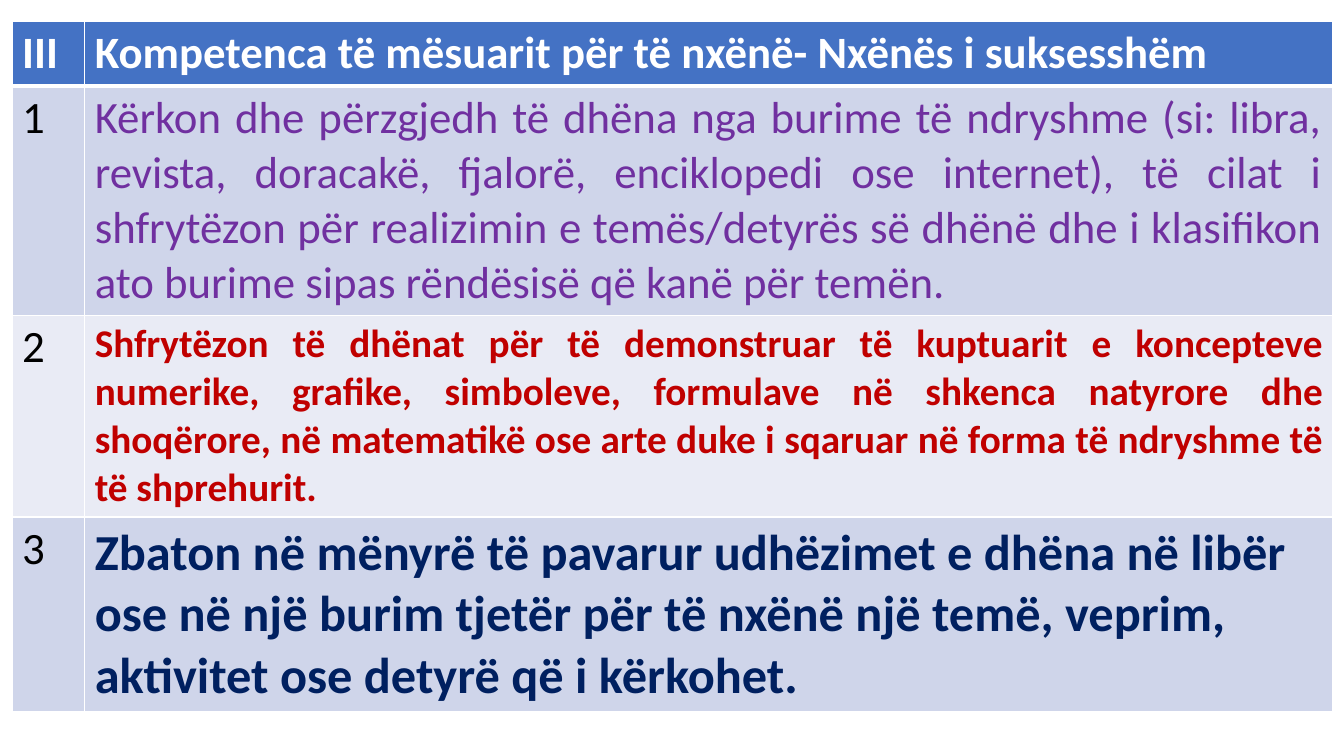
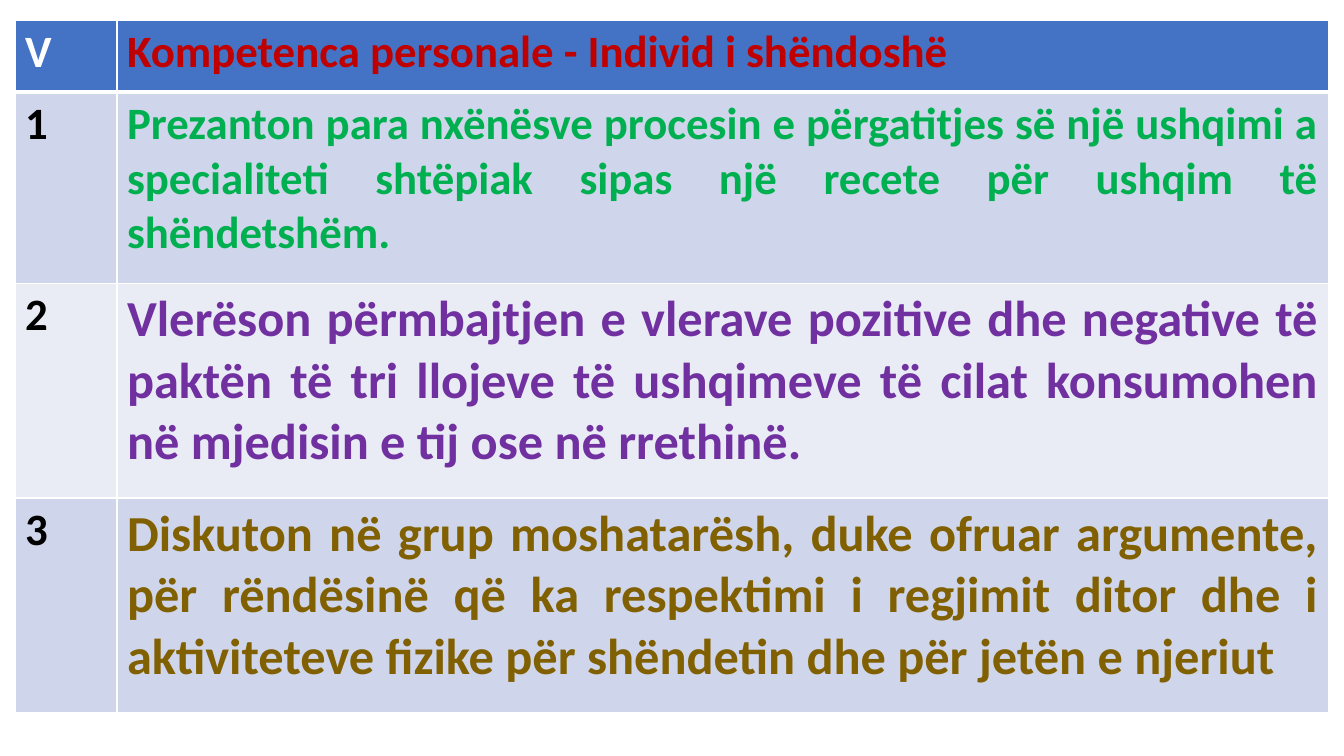
from dataclasses import dataclass

from lxml.etree import SubElement
from pptx import Presentation
from pptx.dml.color import RGBColor
from pptx.enum.text import PP_ALIGN as Align
from pptx.oxml.ns import qn
from pptx.util import Inches, Pt

FONT = "Calibri"
COLORS = {
    "header": "4472C4",
    "odd_band": "CFD5EA",
    "even_band": "E9EBF5",
    "white": "FFFFFF",
    "black": "000000",
    "purple": "7030A0",
    "red": "C00000",
    "navy": "002060",
    "green": "00B050",
    "olive": "806000",
}
THIN, THICK = 1, 3


@dataclass(frozen=True)
class Row:
    label: str
    text: str
    color: str
    height: float
    size: int = 32
    bold: bool = True
    align: Align = Align.JUSTIFY


@dataclass(frozen=True)
class Competence:
    left: float
    top: float
    columns: tuple[float, float]
    bold_labels: bool
    rows: tuple[Row, ...]


COMPETENCES = (
    Competence(0.12, 0.21, (0.72, 12.38), False, (
        Row("III", "Kompetenca të mësuarit për të nxënë- Nxënës i suksesshëm",
            "white", 0.64, align=Align.LEFT),
        Row("1", "Kërkon dhe përzgjedh të dhëna nga burime të ndryshme (si: libra, "
            "revista, doracakë, fjalorë, enciklopedi ose internet), të cilat i "
            "shfrytëzon për realizimin e temës/detyrës së dhënë dhe i klasifikon "
            "ato burime sipas rëndësisë që kanë për temën.",
            "purple", 2.27, bold=False),
        Row("2", "Shfrytëzon të dhënat për të demonstruar të kuptuarit e koncepteve "
            "numerike, grafike, simboleve, formulave në shkenca natyrore dhe "
            "shoqërore, në matematikë ose arte duke i sqaruar në forma të ndryshme "
            "të të shprehurit.",
            "red", 2.0, size=28),
        Row("3", "Zbaton në mënyrë të pavarur udhëzimet e dhëna në libër ose në një "
            "burim tjetër për të nxënë një temë, veprim, aktivitet ose detyrë që i "
            "kërkohet.",
            "navy", 1.93, size=36, align=Align.LEFT),
    )),
    Competence(0.15, 0.2, (1.01, 12.02), True, (
        Row("V", "Kompetenca personale - Individ i shëndoshë",
            "red", 0.71, align=Align.LEFT),
        Row("1", "Prezanton para nxënësve procesin e përgatitjes së një ushqimi a "
            "specialiteti shtëpiak sipas një recete për ushqim të shëndetshëm.",
            "green", 1.9),
        Row("2", "Vlerëson përmbajtjen e vlerave pozitive dhe negative të paktën të "
            "tri llojeve të ushqimeve të cilat konsumohen në mjedisin e tij ose në "
            "rrethinë.",
            "purple", 2.13, size=36),
        Row("3", "Diskuton në grup moshatarësh, duke ofruar argumente, për rëndësinë "
            "që ka respektimi i regjimit ditor dhe i aktiviteteve fizike për "
            "shëndetin dhe për jetën e njeriut",
            "olive", 2.13, size=36),
    )),
)


def set_borders(cell, top: int, bottom: int) -> None:
    """White cell borders, with widths in points."""
    properties = cell._tc.get_or_add_tcPr()
    for side, width in (("L", THIN), ("R", THIN), ("T", top), ("B", bottom)):
        line = SubElement(properties, qn(f"a:ln{side}"), w=str(Pt(width)))
        fill = SubElement(line, qn("a:solidFill"))
        SubElement(fill, qn("a:srgbClr"), val=COLORS["white"])


def write_cell(cell, text: str, color: str, size: int, bold: bool, align: Align) -> None:
    cell.text = text
    para = cell.text_frame.paragraphs[0]
    para.alignment = align
    para.font.name = FONT
    para.font.size = Pt(size)
    para.font.bold = bold
    para.font.color.rgb = RGBColor.from_string(COLORS[color])


def add_competence(deck, competence: Competence) -> None:
    page = deck.slides.add_slide(deck.slide_layouts[6])
    rows = competence.rows
    table = page.shapes.add_table(
        len(rows), len(competence.columns),
        Inches(competence.left), Inches(competence.top),
        Inches(sum(competence.columns)), Inches(sum(row.height for row in rows)),
    ).table
    for column, width in zip(table.columns, competence.columns):
        column.width = Inches(width)

    for index, row in enumerate(rows):
        table.rows[index].height = Inches(row.height)
        is_header = index == 0
        band = "header" if is_header else "odd_band" if index % 2 else "even_band"
        label_cell, text_cell = table.cell(index, 0), table.cell(index, 1)

        # Borders and band; the rule below the header is thick
        for cell in (label_cell, text_cell):
            set_borders(cell, THICK if index == 1 else THIN, THICK if is_header else THIN)
            cell.fill.solid()
            cell.fill.fore_color.rgb = RGBColor.from_string(COLORS[band])

        # Row number and description
        write_cell(label_cell, row.label, "white" if is_header else "black", 32,
                   is_header or competence.bold_labels, Align.LEFT)
        write_cell(text_cell, row.text, row.color, row.size, row.bold, row.align)


def main() -> None:
    deck = Presentation()
    deck.slide_width, deck.slide_height = Inches(13.33), Inches(7.5)
    for competence in COMPETENCES:
        add_competence(deck, competence)
    deck.save("out.pptx")


if __name__ == "__main__":
    main()
